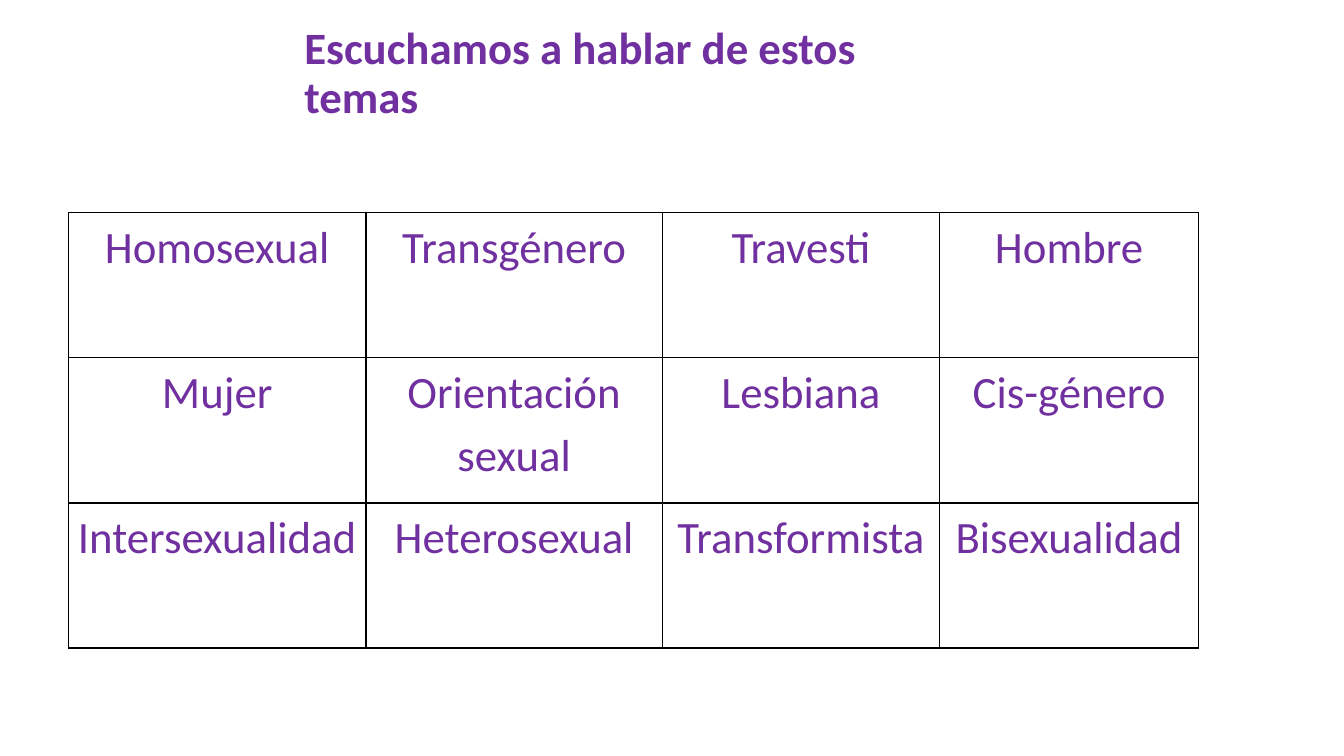
from lxml.etree import SubElement
from pptx import Presentation
from pptx.dml.color import RGBColor
from pptx.enum.text import MSO_ANCHOR, PP_ALIGN
from pptx.oxml.ns import qn
from pptx.util import Inches, Pt

PURPLE = "7030A0"
BLACK = "000000"
TOPICS = [
    ["Homosexual", "Transgénero", "Travesti", "Hombre"],
    ["Mujer", "Orientación sexual", "Lesbiana", "Cis-género"],
    ["Intersexualidad", "Heterosexual", "Transformista", "Bisexualidad"],
]
COLUMN_WIDTHS = [2.95, 2.94, 2.75, 2.57]


def color(value):
    """Turn a hex string into a colour."""
    return RGBColor.from_string(value)


def style_text(paragraph, spacing, bold=False):
    """Set the line spacing and the font of a paragraph."""
    paragraph.line_spacing = spacing
    for span in paragraph.runs:
        span.font.name = "Calibri"
        span.font.size = Pt(32)
        span.font.bold = bold
        span.font.color.rgb = color(PURPLE)


def add_borders(cell):
    """Draw a thin line on the four sides of a cell."""
    properties = cell._tc.get_or_add_tcPr()
    for position, side in enumerate(("lnL", "lnR", "lnT", "lnB")):
        line = SubElement(properties, qn(f"a:{side}"), w=str(Pt(1)))
        fill = SubElement(line, qn("a:solidFill"))
        SubElement(fill, qn("a:srgbClr"), val=BLACK)
        properties.insert(position, line)


def add_title(page, left, top, width, height):
    """Place the heading in the given box."""
    box = page.shapes.add_textbox(Inches(left), Inches(top), Inches(width), Inches(height))
    frame = box.text_frame
    frame.word_wrap = True
    frame.vertical_anchor = MSO_ANCHOR.MIDDLE
    frame.text = "Escuchamos a hablar de estos temas"
    style_text(frame.paragraphs[0], 0.9, bold=True)


def add_topics(page, left, top, width, height):
    """Place the grid of topics in the given box."""
    table = page.shapes.add_table(
        len(TOPICS), len(COLUMN_WIDTHS),
        Inches(left), Inches(top), Inches(width), Inches(height),
    ).table
    table.first_row = False
    table.horz_banding = False
    for column, column_width in zip(table.columns, COLUMN_WIDTHS):
        column.width = Inches(column_width)
    for row, topics in enumerate(TOPICS):
        for column, topic in enumerate(topics):
            cell = table.cell(row, column)
            cell.fill.background()
            cell.margin_left = cell.margin_right = Inches(0.07)
            cell.margin_top = cell.margin_bottom = 0
            cell.text_frame.text = topic
            paragraph = cell.text_frame.paragraphs[0]
            paragraph.alignment = PP_ALIGN.CENTER
            style_text(paragraph, 1.15)
            add_borders(cell)


def main():
    """Build the slide and save it."""
    deck = Presentation()
    deck.slide_width = Inches(13.33)
    deck.slide_height = Inches(7.5)
    page = deck.slides.add_slide(deck.slide_layouts[6])
    add_title(page, 2.92, 0.33, 6.77, 0.82)
    add_topics(page, 0.68, 2.11, sum(COLUMN_WIDTHS), 4.32)
    deck.save("out.pptx")


if __name__ == "__main__":
    main()
